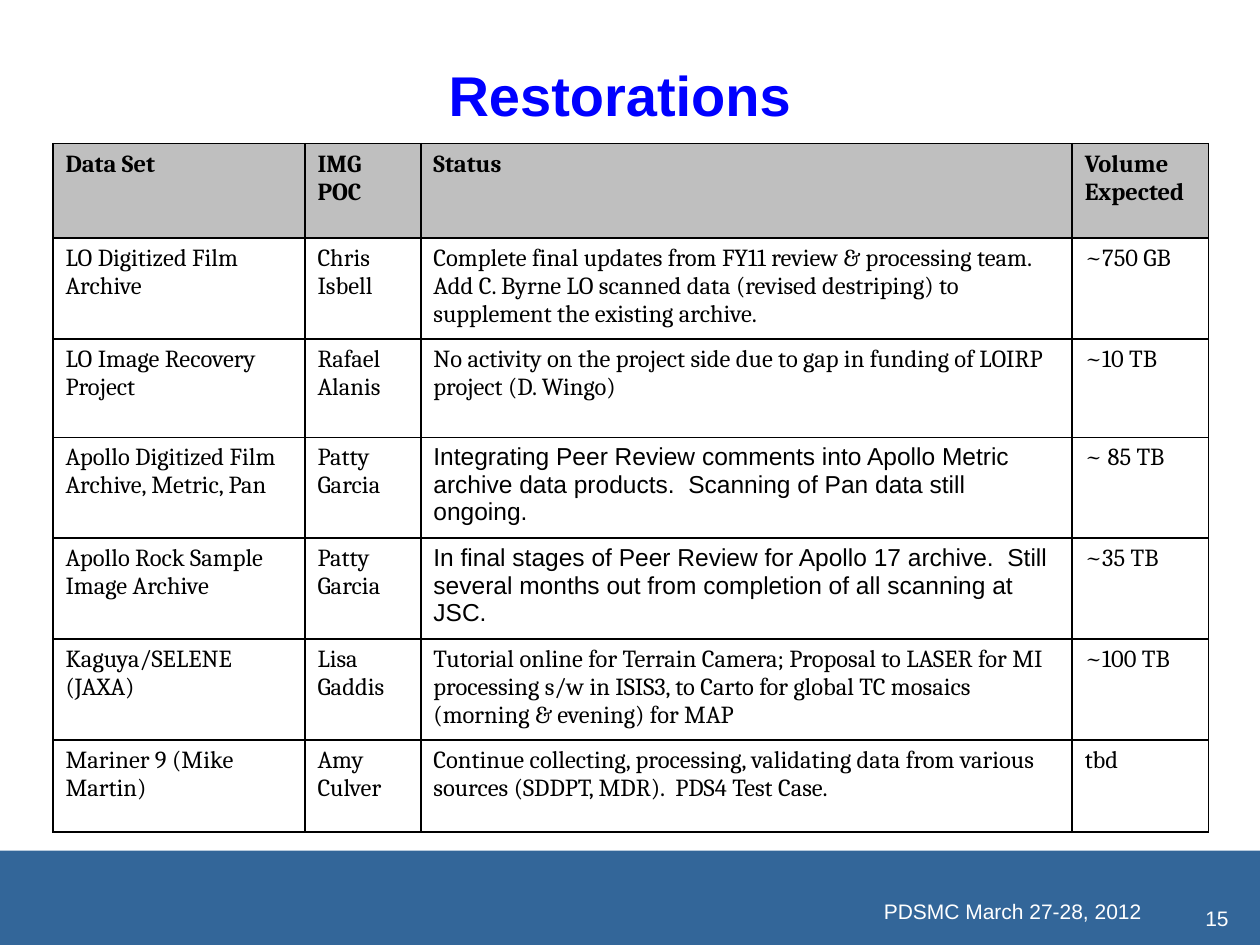
from typing import NamedTuple

from lxml import etree
from pptx import Presentation
from pptx import util as u
from pptx.dml.color import RGBColor
from pptx.enum import shapes, text
from pptx.oxml import ns

BLACK, WHITE, BLUE = "000000", "FFFFFF", "0000FF"
HEADER_GRAY, FOOTER_BLUE = "BFBFBF", "336699"


class Restoration(NamedTuple):
    data_set: str
    contact: str
    status: str
    volume: str
    status_font: str = "Cambria"


HEADER = ("Data Set", "IMG POC", "Status", "Volume Expected")
RESTORATIONS = [
    Restoration("LO Digitized Film Archive", "Chris Isbell",
                "Complete final updates from FY11 review & processing team.  Add C. Byrne LO "
                "scanned data (revised destriping) to supplement the existing archive.", "~750 GB"),
    Restoration("LO Image Recovery Project", "Rafael Alanis",
                "No activity on the project side due to gap in funding of LOIRP project (D. Wingo)",
                "~10 TB"),
    Restoration("Apollo Digitized Film Archive, Metric, Pan", "Patty Garcia",
                "Integrating Peer Review comments into Apollo Metric archive data products.  "
                "Scanning of Pan data still ongoing.", "~ 85 TB", "Arial"),
    Restoration("Apollo Rock Sample Image Archive", "Patty Garcia",
                "In final stages of Peer Review for Apollo 17 archive.  Still several months out "
                "from completion of all scanning at JSC.", "~35 TB", "Arial"),
    Restoration("Kaguya/SELENE (JAXA)", "Lisa Gaddis",
                "Tutorial online for Terrain Camera; Proposal to LASER for MI processing s/w in "
                "ISIS3, to Carto for global TC mosaics (morning & evening) for MAP", "~100 TB"),
    Restoration("Mariner 9 (Mike Martin)", "Amy Culver",
                "Continue collecting, processing, validating data from various sources "
                "(SDDPT, MDR).  PDS4 Test Case.", "tbd"),
]
COLUMN_WIDTHS = (2, 0.92, 5.17, 1.08)
ROW_HEIGHTS = (0.75, 0.73, 0.78, 0.73, 0.73, 0.73, 0.73)


def color(value: str) -> RGBColor:
    return RGBColor.from_string(value)


def write(frame, content: str, *, size: float, font: str = "Arial", fill: str = BLACK,
          bold: bool = False, align=text.PP_ALIGN.LEFT) -> None:
    paragraph = frame.paragraphs[0]
    paragraph.alignment = align
    run = paragraph.add_run()
    run.text = content
    run.font.size = u.Pt(size)
    run.font.name = font
    run.font.bold = bold
    run.font.color.rgb = color(fill)


def add_text(slide, left: float, top: float, width: float, height: float, content: str,
             *, wrap: bool = True, **style) -> None:
    box = slide.shapes.add_textbox(*map(u.Inches, (left, top, width, height)))
    box.text_frame.word_wrap = wrap
    write(box.text_frame, content, **style)


def add_borders(cell) -> None:
    """Draw a 1 pt black line on each side of the cell."""
    properties = cell._tc.get_or_add_tcPr()
    for side in ("a:lnL", "a:lnR", "a:lnT", "a:lnB"):
        line = etree.SubElement(properties, ns.qn(side), w=str(u.Pt(1)))
        fill = etree.SubElement(line, ns.qn("a:solidFill"))
        etree.SubElement(fill, ns.qn("a:srgbClr"), val=BLACK)


def add_restoration_table(slide) -> None:
    frame = slide.shapes.add_table(
        len(ROW_HEIGHTS), len(COLUMN_WIDTHS), u.Inches(0.42), u.Inches(1.14),
        u.Inches(sum(COLUMN_WIDTHS)), u.Inches(sum(ROW_HEIGHTS)))
    table = frame.table
    for column, width in zip(table.columns, COLUMN_WIDTHS):
        column.width = u.Inches(width)
    for row, height in zip(table.rows, ROW_HEIGHTS):
        row.height = u.Inches(height)

    for row_index, record in enumerate([Restoration(*HEADER), *RESTORATIONS]):
        is_header = row_index == 0
        for column_index, content in enumerate(record[:len(HEADER)]):
            cell = table.cell(row_index, column_index)
            add_borders(cell)
            if is_header:
                cell.fill.solid()
                cell.fill.fore_color.rgb = color(HEADER_GRAY)
            else:
                cell.fill.background()
            is_status = HEADER[column_index] == "Status"
            write(cell.text_frame, content, size=14, bold=is_header,
                  font=record.status_font if is_status else "Cambria")


def add_footer_band(slide) -> None:
    band = slide.shapes.add_shape(shapes.MSO_SHAPE.RECTANGLE, 0, u.Inches(6.75),
                                  u.Inches(10), u.Inches(0.75))
    band.shadow.inherit = False
    band.fill.solid()
    band.fill.fore_color.rgb = color(FOOTER_BLUE)
    band.line.fill.background()


def main() -> None:
    presentation = Presentation()
    presentation.slide_width = u.Inches(10)
    presentation.slide_height = u.Inches(7.5)
    slide = presentation.slides.add_slide(presentation.slide_layouts[6])

    add_footer_band(slide)
    add_text(slide, 8.71, 7.14, 1.14, 0.3, "15", size=12, fill=WHITE,
             align=text.PP_ALIGN.RIGHT)
    add_text(slide, 3.45, 0.43, 2.94, 0.64, "Restorations", wrap=False, size=32,
             fill=BLUE, bold=True, align=text.PP_ALIGN.CENTER)
    add_text(slide, 5.83, 7.08, 3.33, 0.34, "PDSMC March 27-28, 2012", size=12,
             fill=WHITE, align=text.PP_ALIGN.RIGHT)
    add_restoration_table(slide)

    presentation.save("out.pptx")


if __name__ == "__main__":
    main()
